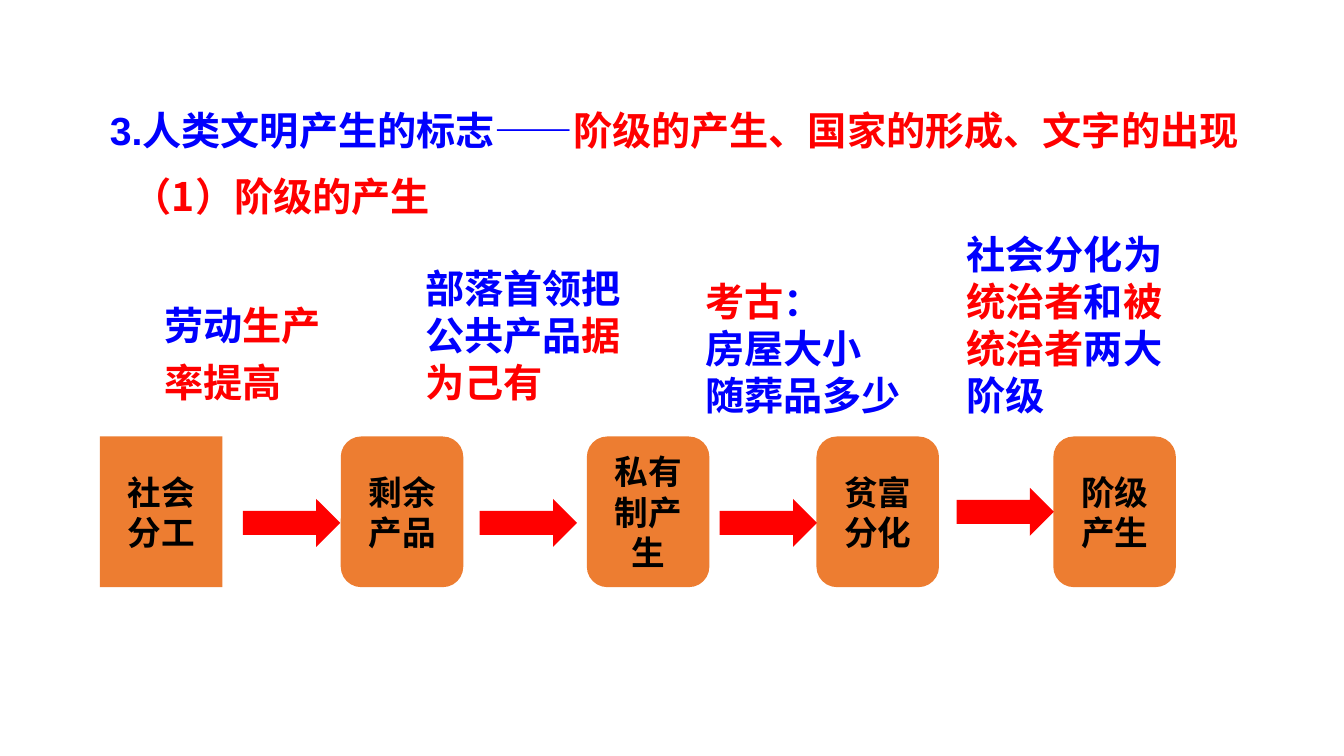
from pptx import Presentation
from pptx.dml.color import RGBColor
from pptx.enum.shapes import MSO_SHAPE
from pptx.enum.text import MSO_ANCHOR, MSO_AUTO_SIZE, PP_ALIGN
from pptx.oxml.ns import qn
from pptx.util import Pt

COLORS = {"blue": "0000FE", "red": "FF0000", "orange": "ED7D31", "black": "000000"}
CJK_FONT = "Noto Sans CJK SC"

# Every text is a list of paragraphs, every paragraph a list of (text, colour) runs.
TITLE = [[("3.人类文明产生的标志——", "blue"), ("阶级的产生、国家的形成、文字的出现", "red")]]
TITLE_BOX = (71.3, 72, 851, 41)

# (left, top, width, height), line spacing, paragraphs
NOTES = [
    ((87.8, 113, 365, 47.5), 1.2, [[("（1）阶级的产生", "red")]]),
    ((110.2, 205.2, 132.5, 88.6), 1.2,
     [[("劳动", "blue"), ("生产", "red")], [("率提高", "red")]]),
    ((296.6, 185, 156.2, 108.7), 1,
     [[("部落首领把公共产品", "blue"), ("据为己有", "red")]]),
    ((496.8, 194.4, 161.3, 108.7), 1,
     [[("考古", "red"), ("：", "blue")], [("房屋大小", "blue")], [("随葬品多少", "blue")]]),
    ((683.3, 160.6, 156.2, 142.6), 1,
     [[("社会分化为", "blue"), ("统治者", "red"), ("和", "blue"),
       ("被统治者", "red"), ("两大阶级", "blue")]]),
]

# left, lines of text
STAGES = [
    (71.3, ["社会", "分工"]),
    (243.4, ["剩余产品"]),
    (419.2, ["私有", "制产生"]),
    (583.2, ["贫富分化"]),
    (752.4, ["阶级产生"]),
]
STAGE_TOP, STAGE_WIDTH, STAGE_HEIGHT = 311.8, 87.5, 107.6

# left, top
ARROWS = [(173.5, 356.4), (342.7, 356.4), (514.1, 356.4), (683.3, 348.5)]
ARROW_SIZE = (69.5, 34.2)


def points(*values):
    return [Pt(value) for value in values]


def write(frame, paragraphs, size, font_name, alignment, spacing=1):
    frame.word_wrap = True
    for index, runs in enumerate(paragraphs):
        paragraph = frame.paragraphs[0] if index == 0 else frame.add_paragraph()
        for name, value in {"alignment": alignment, "line_spacing": spacing}.items():
            setattr(paragraph, name, value)
        for text, color in runs:
            run = paragraph.add_run()
            run.text = text
            for name, value in {"size": Pt(size), "bold": True, "name": font_name}.items():
                setattr(run.font, name, value)
            run.font.color.rgb = RGBColor.from_string(COLORS[color])
            if font_name == CJK_FONT:
                east_asian = run.font._element.makeelement(qn("a:ea"), {"typeface": font_name})
                run.font._element.find(qn("a:latin")).addnext(east_asian)


def add_filled(slide, kind, box, color):
    shape = slide.shapes.add_shape(kind, *points(*box))
    shape.shadow.inherit = False
    shape.fill.solid()
    shape.fill.fore_color.rgb = RGBColor.from_string(COLORS[color])
    shape.line.fill.background()
    return shape


def main():
    presentation = Presentation()
    presentation.slide_width, presentation.slide_height = points(960, 540)
    slide = presentation.slides.add_slide(presentation.slide_layouts[5])

    title = slide.shapes.title
    title.left, title.top, title.width, title.height = points(*TITLE_BOX)
    title.text_frame.auto_size = MSO_AUTO_SIZE.NONE
    title.text_frame.vertical_anchor = MSO_ANCHOR.TOP
    write(title.text_frame, TITLE, 28, "Arial", PP_ALIGN.LEFT)

    for box, spacing, paragraphs in NOTES:
        note = slide.shapes.add_textbox(*points(*box))
        write(note.text_frame, paragraphs, 28, CJK_FONT, PP_ALIGN.LEFT, spacing)

    for index, (left, lines) in enumerate(STAGES):
        box = (left, STAGE_TOP, STAGE_WIDTH, STAGE_HEIGHT)
        stage = add_filled(slide, MSO_SHAPE.ROUNDED_RECTANGLE, box, "orange")
        if index == 0:
            stage.adjustments[0] = 0
        stage.text_frame.vertical_anchor = MSO_ANCHOR.MIDDLE
        write(stage.text_frame, [[(line, "black")] for line in lines],
              24, "Arial", PP_ALIGN.CENTER)

    for position in ARROWS:
        add_filled(slide, MSO_SHAPE.RIGHT_ARROW, position + ARROW_SIZE, "red")

    presentation.save("out.pptx")


if __name__ == "__main__":
    main()
